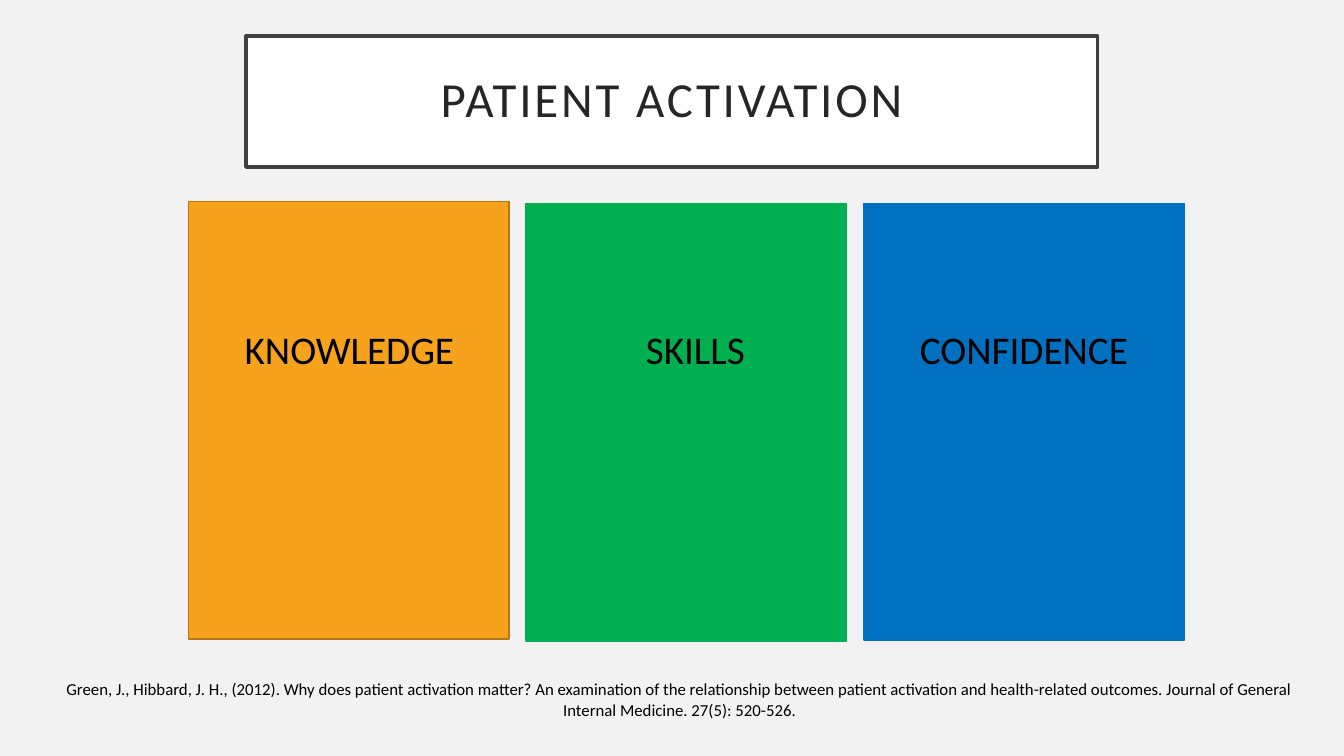
from pptx import Presentation
from pptx.dml.color import RGBColor
from pptx.enum.shapes import MSO_SHAPE as Shape
from pptx.enum.text import MSO_ANCHOR as Anchor, PP_ALIGN as Align
from pptx.util import Cm, Pt

CARD_LEFT, CARD_PITCH, CARD_WIDTH = 4.75, 8.51, 8.08
CITATION = (
    "Green, J., Hibbard, J. H., (2012). Why does patient activation matter? "
    "An examination of the relationship between patient activation and "
    "health-related outcomes. Journal of General Internal Medicine. 27(5): 520-526."
)


def paint(shape, fill, line, width):
    shape.fill.solid()
    shape.fill.fore_color.rgb = RGBColor.from_string(fill)
    shape.line.color.rgb = RGBColor.from_string(line)
    shape.line.width = Pt(width)


def write(shape, text, size, color="000000"):
    """Fill the shape with one centred Calibri paragraph and return it."""
    shape.text_frame.word_wrap = True
    para = shape.text_frame.paragraphs[0]
    para.text = text
    para.alignment = Align.CENTER
    para.font.name = "Calibri"
    para.font.size = Pt(size)
    para.font.color.rgb = RGBColor.from_string(color)
    return para


deck = Presentation()
deck.slide_width, deck.slide_height = Cm(33.87), Cm(19.05)
slide = deck.slides.add_slide(deck.slide_layouts[5])
slide.background.fill.solid()
slide.background.fill.fore_color.rgb = RGBColor.from_string("F2F2F2")

# Title
title = slide.shapes.title
title.left, title.top, title.width, title.height = Cm(6.2), Cm(0.91), Cm(21.46), Cm(3.3)
paint(title, "FFFFFF", "404040", 2.5)
frame = title.text_frame
frame.vertical_anchor = Anchor.MIDDLE
frame.margin_left = frame.margin_right = frame.margin_top = frame.margin_bottom = Cm(0.51)
heading = write(title, "PATIENT ACTIVATION", 35, "262626")
heading.line_spacing = 0.9
heading.runs[0].font._element.set("spc", "200")

# Cards: label, fill, line, top, height, label left, label width
cards = [
    ("KNOWLEDGE", "F6A21D", "B67815", 5.08, 11.02, 5.44, 6.73),
    ("SKILLS", "00B050", "00B050", 5.13, 11.02, 14.45, 6.15),
    ("CONFIDENCE", "0070C0", "0070C0", 5.13, 11, 22.35, 6.91),
]
for index, (label, fill, line, top, height, label_left, label_width) in enumerate(cards):
    card = slide.shapes.add_shape(
        Shape.RECTANGLE, Cm(CARD_LEFT + index * CARD_PITCH), Cm(top), Cm(CARD_WIDTH), Cm(height)
    )
    card.shadow.inherit = False
    paint(card, fill, line, 1)
    box = slide.shapes.add_textbox(Cm(label_left), Cm(8.08), Cm(label_width), Cm(1.45))
    write(box, label, 28)

# Citation
citation = slide.shapes.add_textbox(Cm(1.14), Cm(16.99), Cm(31.98), Cm(1.27))
write(citation, CITATION, 12)

deck.save("out.pptx")
